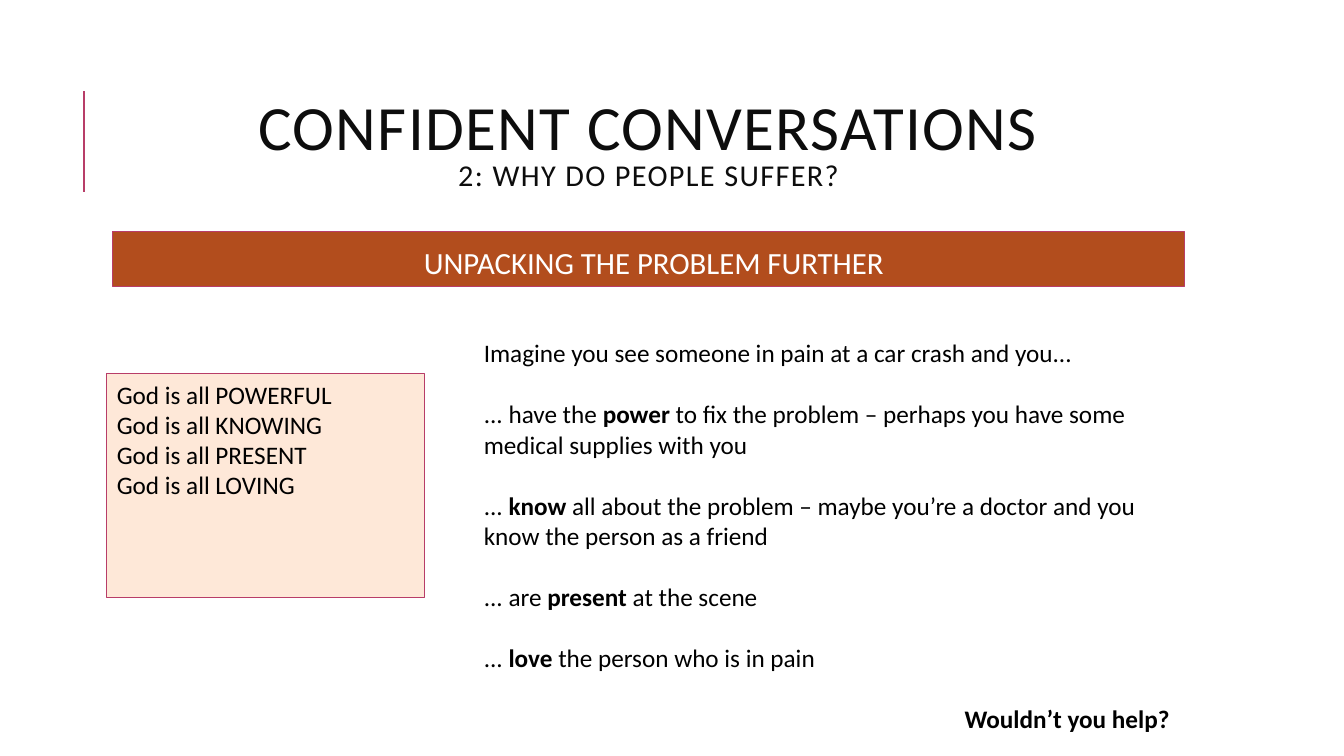
from dataclasses import dataclass
from pptx import Presentation
from pptx.dml.color import RGBColor
from pptx.enum.shapes import MSO_CONNECTOR, MSO_SHAPE
from pptx.enum.text import MSO_ANCHOR, MSO_AUTO_SIZE, PP_ALIGN
from pptx.oxml.ns import qn
from pptx.util import Inches, Pt
from lxml.etree import SubElement

# Content
TITLE = "CONFIDENT CONVERSATIONS"
TOPIC = "2: WHY DO PEOPLE SUFFER?"
BANNER = "UNPACKING THE PROBLEM FURTHER"
TRAITS = ["POWERFUL", "KNOWING", "PRESENT", "LOVING"]
STORY = [  # lead, bold word, rest
    ("Imagine you see someone in pain at a car crash and you...", "", ""),
    ("... have the ", "power", " to fix the problem – perhaps you have some medical supplies with you"),
    ("... ", "know ", "all about the problem – maybe you’re a doctor and you know the person as a friend"),
    ("... are ", "present ", "at the scene"),
    ("... ", "love ", "the person who is in pain"),
    ("", "Wouldn’t you help?", ""),
]


@dataclass(frozen=True)
class Theme:
    font: str = "Calibri"
    ink: str = "000000"
    head: str = "0D0D0D"
    white: str = "FFFFFF"
    rust: str = "B24D1D"
    peach: str = "FEE8D8"
    pink: str = "B83D68"
    title: float = 45
    topic: float = 21.6
    band: float = 22
    body: float = 18
    gap: float = 22


T = Theme()


def add_run(para, text, size, color, bold=False):
    run = para.add_run()
    run.text = text
    font = run.font
    font.name, font.size, font.bold = T.font, Pt(size), bold
    font.color.rgb = RGBColor.from_string(color)
    return run


def add_box(slide, area, fill):
    box = slide.shapes.add_shape(MSO_SHAPE.RECTANGLE, *map(Inches, area))
    box.shadow.inherit = False
    box.fill.solid()
    box.fill.fore_color.rgb = RGBColor.from_string(fill)
    box.line.color.rgb = RGBColor.from_string(T.pink)
    box.line.width = Pt(0.75)
    frame = box.text_frame
    frame.word_wrap = True
    frame.vertical_anchor = MSO_ANCHOR.TOP
    return frame


def next_para(frame, first):
    return frame.paragraphs[0] if first else frame.add_paragraph()


deck = Presentation()
deck.slide_width, deck.slide_height = Inches(13.33), Inches(7.5)
slide = deck.slides.add_slide(deck.slide_layouts[5])

# Accent line
rule = slide.shapes.add_connector(
    MSO_CONNECTOR.STRAIGHT, Inches(0.83), Inches(1.9), Inches(0.83), Inches(0.9))
rule.line.color.rgb = RGBColor.from_string(T.pink)
rule.line.width = Pt(1.5)
SubElement(rule._element.spPr, qn("a:effectLst"))

# Title
head = slide.shapes.title
head.left, head.top, head.width, head.height = map(Inches, (1.12, 0.64, 10.63, 1.64))
frame = head.text_frame
frame.word_wrap = True
frame.auto_size = MSO_AUTO_SIZE.NONE
frame.vertical_anchor = MSO_ANCHOR.MIDDLE
para = frame.paragraphs[0]
para.alignment, para.line_spacing = PP_ALIGN.CENTER, 0.8
runs = [add_run(para, TITLE, T.title, T.head)]
para.add_line_break()
runs.append(add_run(para, TOPIC, T.topic, T.head))
for run in runs:
    run.font._element.set("spc", "100")

# Banner
frame = add_box(slide, (1.12, 2.3, 10.63, 0.54), T.rust)
frame.margin_left = Inches(0.15)
frame.margin_right = frame.margin_top = frame.margin_bottom = Inches(0.05)
para = frame.paragraphs[0]
para.alignment, para.line_spacing = PP_ALIGN.CENTER, 1.2
add_run(para, BANNER, T.band, T.white)

# Traits
frame = add_box(slide, (1.06, 3.71, 3.15, 2.22), T.peach)
for i, trait in enumerate(TRAITS):
    para = next_para(frame, i == 0)
    para.alignment = PP_ALIGN.LEFT
    add_run(para, f"God is all {trait}", T.body, T.ink)

# Story
frame = slide.shapes.add_textbox(*map(Inches, (4.7, 3.3, 7, 4.04))).text_frame
frame.word_wrap = True
for i, parts in enumerate(STORY):
    para = next_para(frame, i == 0)
    if i:
        para.space_before = Pt(T.gap)
    for j, text in enumerate(parts):
        if text:
            add_run(para, text, T.body, T.ink, bold=j == 1)
para.alignment = PP_ALIGN.RIGHT

deck.save("out.pptx")
